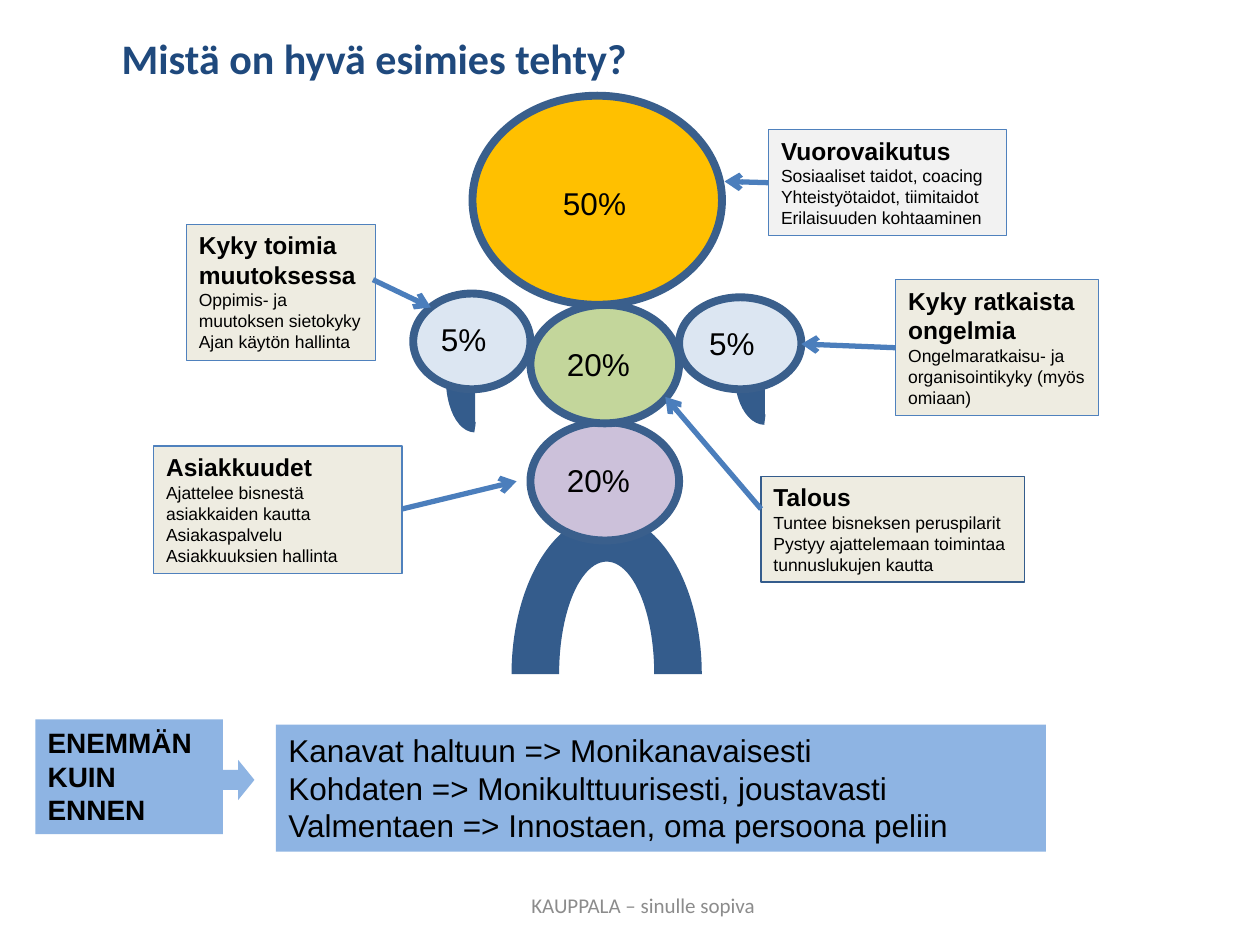
from lxml import etree
from pptx import Presentation
from pptx.dml.color import RGBColor
from pptx.enum import shapes, text
from pptx.oxml.ns import qn
from pptx.util import Inches, Pt

THEME = {
    "title": "1F497D", "foot": "8C8C8C", "ink": "000000",
    "limb": "345C8C", "rim": "3A5F8C", "edge": "4F81BD", "arrow": "4B7EBC",
    "head": "FFC000", "chest": "C3D69B", "belly": "CCC1DA", "hand": "DCE6F2",
    "light": "F2F2F2", "sand": "EEECE1", "band": "8EB4E3",
    "sans": "Arial", "soft": "Calibri",
    "h1": 24, "big": 18, "mid": 16, "name": 14, "foot_size": 12, "small": 10,
}
KIND = shapes.MSO_SHAPE

TITLE = "Mistä on hyvä esimies tehty?"
FOOT = "KAUPPALA – sinulle sopiva"

# Places are (left, top, width, height) in inches
LEGS = (4.06, 4.08, 1.51, 2.54)
ARMS = [(5.87, 2.59, 0.4, 0.74), (3.58, 2.62, 0.38, 0.77)]
# place, fill, label, label corner
BODY = [
    ((4.21, 3.35, 1.18, 0.94), "belly", "20%", (4.4, 3.61)),
    ((3.75, 0.76, 1.98, 1.66), "head", "50%", (4.37, 1.41)),
    ((4.21, 2.42, 1.18, 0.94), "chest", "20%", (4.4, 2.69)),
    ((5.39, 2.36, 0.97, 0.73), "hand", "5%", (5.53, 2.52)),
    ((3.28, 2.33, 0.93, 0.76), "hand", "5%", (3.4, 2.49)),
]
# place, fill, line, heading, details, arrow (from, to)
SKILLS = [
    ((6.1, 1.03, 1.89, 0.84), "light", "edge", "Vuorovaikutus",
     ["Sosiaaliset taidot, coacing", "Yhteistyötaidot, tiimitaidot",
      "Erilaisuuden kohtaaminen"],
     ((6.1, 1.45), (5.75, 1.44))),
    ((7.11, 2.22, 1.61, 1.08), "sand", "edge", "Kyky ratkaista ongelmia",
     ["Ongelmaratkaisu- ja organisointikyky (myös omiaan)"],
     ((7.11, 2.76), (6.36, 2.73))),
    ((1.48, 1.78, 1.5, 1.08), "sand", "edge", "Kyky toimia muutoksessa",
     ["Oppimis- ja muutoksen sietokyky", "Ajan käytön hallinta"],
     ((2.96, 2.22), (3.42, 2.44))),
    ((1.22, 3.54, 1.97, 1.01), "sand", "edge", "Asiakkuudet",
     ["Ajattelee bisnestä asiakkaiden kautta", "Asiakaspalvelu",
      "Asiakkuuksien hallinta"],
     ((3.19, 4.04), (4.1, 3.82))),
    ((6.04, 3.78, 2.09, 0.84), "sand", "limb", "Talous",
     ["Tuntee bisneksen peruspilarit",
      "Pystyy ajattelemaan toimintaa tunnuslukujen kautta"],
     ((6.04, 4.04), (5.28, 3.15))),
]
MORE = ((0.28, 5.71, 1.49, 0.91), ["ENEMMÄN KUIN ENNEN"])
POINT = (1.76, 6.03, 0.26, 0.32)
GOALS = ((2.19, 5.75, 6.11, 1.01), [
    "Kanavat haltuun => Monikanavaisesti",
    "Kohdaten => Monikulttuurisesti, joustavasti",
    "Valmentaen => Innostaen, oma persoona peliin",
])


def inch(nums):
    return [Inches(n) for n in nums]


def tint(name):
    return RGBColor.from_string(THEME[name])


def draw(slide, kind, place, fill, line=None, width=0.75):
    shape = slide.shapes.add_shape(kind, *inch(place))
    shape.shadow.inherit = False
    shape.fill.solid()
    shape.fill.fore_color.rgb = tint(fill)
    if line:
        shape.line.color.rgb = tint(line)
        shape.line.width = Pt(width)
    else:
        shape.line.fill.background()
    return shape


def write(shape, rows, anchor="TOP", align="LEFT"):
    """Fill a shape with rows of (words, size, bold, colour, font)."""
    frame = shape.text_frame
    frame.word_wrap = True
    frame.vertical_anchor = getattr(text.MSO_ANCHOR, anchor)
    for i, (words, size, bold, hue, face) in enumerate(rows):
        para = frame.add_paragraph() if i else frame.paragraphs[0]
        para.text = words
        para.alignment = getattr(text.PP_ALIGN, align)
        font = para.font
        font.name, font.size, font.bold = THEME[face], Pt(THEME[size]), bold
        font.color.rgb = tint(hue)


def plain(lines, size, bold=False):
    return [(line, size, bold, "ink", "sans") for line in lines]


def link(slide, start, end):
    line = slide.shapes.add_connector(
        shapes.MSO_CONNECTOR.STRAIGHT, *inch(start + end))
    line.line.color.rgb = tint("arrow")
    line.line.width = Pt(3)
    etree.SubElement(line.line._get_or_add_ln(), qn("a:tailEnd"), type="arrow")
    etree.SubElement(line._element.spPr, qn("a:effectLst"))


def main():
    deck = Presentation()
    deck.slide_width, deck.slide_height = inch((10, 7.5))
    slide = deck.slides.add_slide(deck.slide_layouts[5])

    title = slide.shapes.title
    title.left, title.top, title.width, title.height = inch((-0.07, 0, 6.08, 0.91))
    write(title, [(TITLE, "h1", True, "title", "soft")], "MIDDLE", "CENTER")
    foot = slide.shapes.add_textbox(*inch((3.52, 6.98, 3.17, 0.4)))
    write(foot, [(FOOT, "foot_size", False, "foot", "soft")], "MIDDLE", "CENTER")

    draw(slide, KIND.BLOCK_ARC, LEGS, "limb")
    for place in ARMS:
        draw(slide, KIND.ARC, place, "limb", "limb", 6).rotation = 180
    for place, fill, label, corner in BODY:
        draw(slide, KIND.OVAL, place, fill, "rim", 4.5)
        box = slide.shapes.add_textbox(*inch(corner + (0.7, 0.4)))
        write(box, plain([label], "big"))

    for place, fill, line, name, details, ends in SKILLS:
        card = draw(slide, KIND.RECTANGLE, place, fill, line)
        write(card, plain([name], "name", True) + plain(details, "small"))
        link(slide, *ends)

    for (place, lines), size, bold in ((MORE, "mid", True), (GOALS, "big", False)):
        write(draw(slide, KIND.RECTANGLE, place, "band"), plain(lines, size, bold))
    draw(slide, KIND.RIGHT_ARROW, POINT, "band")

    deck.save("out.pptx")


if __name__ == "__main__":
    main()
